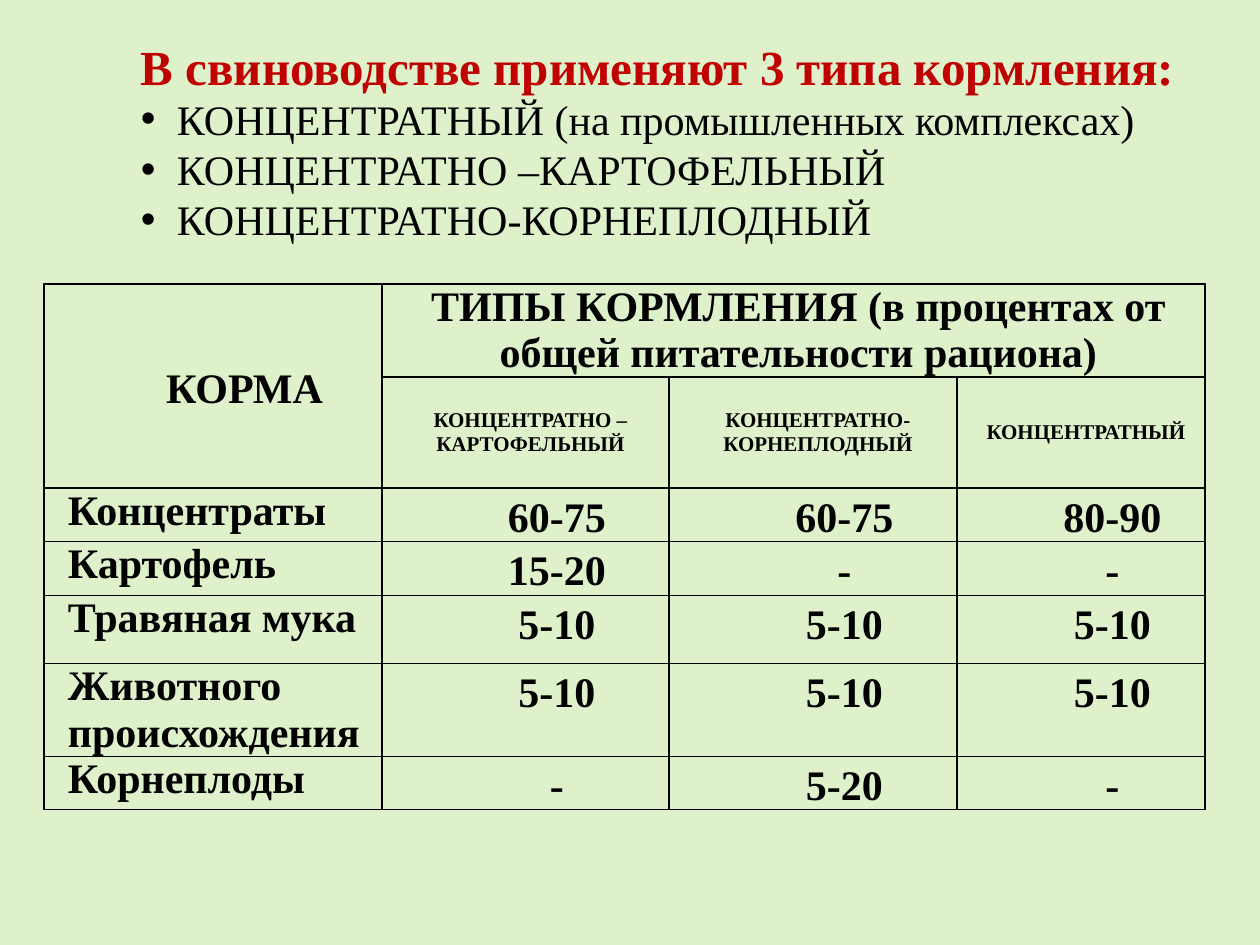
import pptx
import pptx.dml.color
import pptx.enum.text
import pptx.oxml
import pptx.oxml.ns
import pptx.util

ALIGN = pptx.enum.text.PP_ALIGN
ANCHOR = pptx.enum.text.MSO_ANCHOR
EMU_PER_PX = 914400 / 126
BLACK = "000000"
BORDER_PX = 2

TITLE = "В свиноводстве применяют 3 типа кормления:"
FEEDING_TYPES = [
    "КОНЦЕНТРАТНЫЙ (на промышленных комплексах)",
    "КОНЦЕНТРАТНО –КАРТОФЕЛЬНЫЙ",
    "КОНЦЕНТРАТНО-КОРНЕПЛОДНЫЙ",
]
TABLE_TITLE = "ТИПЫ КОРМЛЕНИЯ (в процентах от общей питательности рациона)"
COLUMN_HEADS = ["КОНЦЕНТРАТНО –КАРТОФЕЛЬНЫЙ", "КОНЦЕНТРАТНО-КОРНЕПЛОДНЫЙ", "КОНЦЕНТРАТНЫЙ"]
FEEDS = [
    ("Концентраты", "60-75", "60-75", "80-90"),
    ("Картофель", "15-20", "-", "-"),
    ("Травяная мука", "5-10", "5-10", "5-10"),
    ("Животного происхождения", "5-10", "5-10", "5-10"),
    ("Корнеплоды", "-", "5-20", "-"),
]
COLUMN_WIDTHS = [338, 287, 288, 248]
ROW_HEIGHTS = [93, 111, 53, 54, 68, 93, 53]

CORNER = {"indent": 63, "spacing": 1.15, "align": ALIGN.CENTER, "anchor": ANCHOR.MIDDLE}
HEAD = {"indent": 10, "align": ALIGN.CENTER, "anchor": ANCHOR.MIDDLE}
FEED_NAME = {"indent": 15}
VALUE = {"indent": 63, "spacing": 1.15, "align": ALIGN.CENTER}


def px(length):
    return pptx.util.Emu(round(length * EMU_PER_PX))


def color(hex_value):
    return pptx.dml.color.RGBColor.from_string(hex_value)


def apply_format(target, values):
    for name, value in values.items():
        setattr(target, name, value)


def add_xml(parent, xml):
    declaration = pptx.oxml.ns.nsdecls("a")
    parent.append(pptx.oxml.parse_xml(xml.replace(" ", f" {declaration} ", 1)))


def format_paragraph(paragraph, size, hex_value=BLACK, bold=True, indent=0, hanging=0,
                     spacing=1.0, align=ALIGN.LEFT):
    properties = paragraph._p.get_or_add_pPr()
    properties.set("marL", str(px(indent + hanging)))
    properties.set("indent", str(px(-hanging)))
    if hanging:
        add_xml(properties, '<a:buFont typeface="Arial"/>')
        add_xml(properties, '<a:buChar char="•"/>')
    apply_format(paragraph, {
        "alignment": align, "line_spacing": spacing,
        "space_before": pptx.util.Pt(0), "space_after": pptx.util.Pt(0),
    })
    apply_format(paragraph.font, {
        "name": "Times New Roman", "size": pptx.util.Pt(size), "bold": bold,
    })
    paragraph.font.color.rgb = color(hex_value)


def fill_placeholder(shape, box, lines, **text_format):
    left, top, width, height = map(px, box)
    apply_format(shape, {"left": left, "top": top, "width": width, "height": height})
    frame = shape.text_frame
    frame.text = "\n".join(lines)
    apply_format(frame, {
        "margin_left": 0, "margin_right": 0, "margin_top": 0, "margin_bottom": 0,
        "word_wrap": True, "vertical_anchor": ANCHOR.TOP,
        "auto_size": pptx.enum.text.MSO_AUTO_SIZE.NONE,
    })
    for paragraph in frame.paragraphs:
        format_paragraph(paragraph, **text_format)


def style_cell(cell):
    """Give the cell black borders, no fill and narrow side margins."""
    properties = cell._tc.get_or_add_tcPr()
    for side in "LRTB":
        add_xml(properties, f'<a:ln{side} w="{pptx.util.Pt(1)}"><a:solidFill>'
                            f'<a:srgbClr val="{BLACK}"/></a:solidFill></a:ln{side}>')
    cell.fill.background()
    apply_format(cell, {
        "margin_left": px(9), "margin_right": px(9), "margin_top": 0, "margin_bottom": 0,
    })


def write_cell(cell, text, size=24, anchor=ANCHOR.TOP, **text_format):
    cell.text = text
    cell.vertical_anchor = anchor
    format_paragraph(cell.text_frame.paragraphs[0], size, **text_format)


def add_feed_table(slide):
    frame = slide.shapes.add_table(
        len(ROW_HEIGHTS), len(COLUMN_WIDTHS), px(44), px(284),
        px(sum(COLUMN_WIDTHS)), px(sum(ROW_HEIGHTS)))
    table = frame.table
    apply_format(table, {"first_row": False, "horz_banding": False})
    for column, width in zip(table.columns, COLUMN_WIDTHS):
        column.width = px(width)
    for row, height in zip(table.rows, ROW_HEIGHTS):
        row.height = px(height)
    for cell in table.iter_cells():
        style_cell(cell)

    table.cell(0, 0).merge(table.cell(1, 0))
    table.cell(0, 1).merge(table.cell(0, 3))
    write_cell(table.cell(0, 0), "КОРМА", **CORNER)
    write_cell(table.cell(0, 1), TABLE_TITLE, **HEAD)
    for column, text in enumerate(COLUMN_HEADS, start=1):
        write_cell(table.cell(1, column), text, size=12, **HEAD)
    for row, (name, *shares) in enumerate(FEEDS, start=2):
        write_cell(table.cell(row, 0), name, **FEED_NAME)
        for column, share in enumerate(shares, start=1):
            write_cell(table.cell(row, column), share, **VALUE)


def main():
    presentation = pptx.Presentation()
    apply_format(presentation, {"slide_width": px(1260), "slide_height": px(945)})
    slide = presentation.slides.add_slide(presentation.slide_layouts[1])
    background = slide.background.fill
    background.solid()
    background.fore_color.rgb = color("DEF1CB")

    fill_placeholder(slide.shapes.title, (141, 36, 1050, 58), [TITLE],
                     size=28, hex_value="C00000")
    fill_placeholder(slide.placeholders[1], (141, 93, 1050, 152), FEEDING_TYPES,
                     size=24, bold=False, hanging=36)
    add_feed_table(slide)
    presentation.save("out.pptx")


if __name__ == "__main__":
    main()
